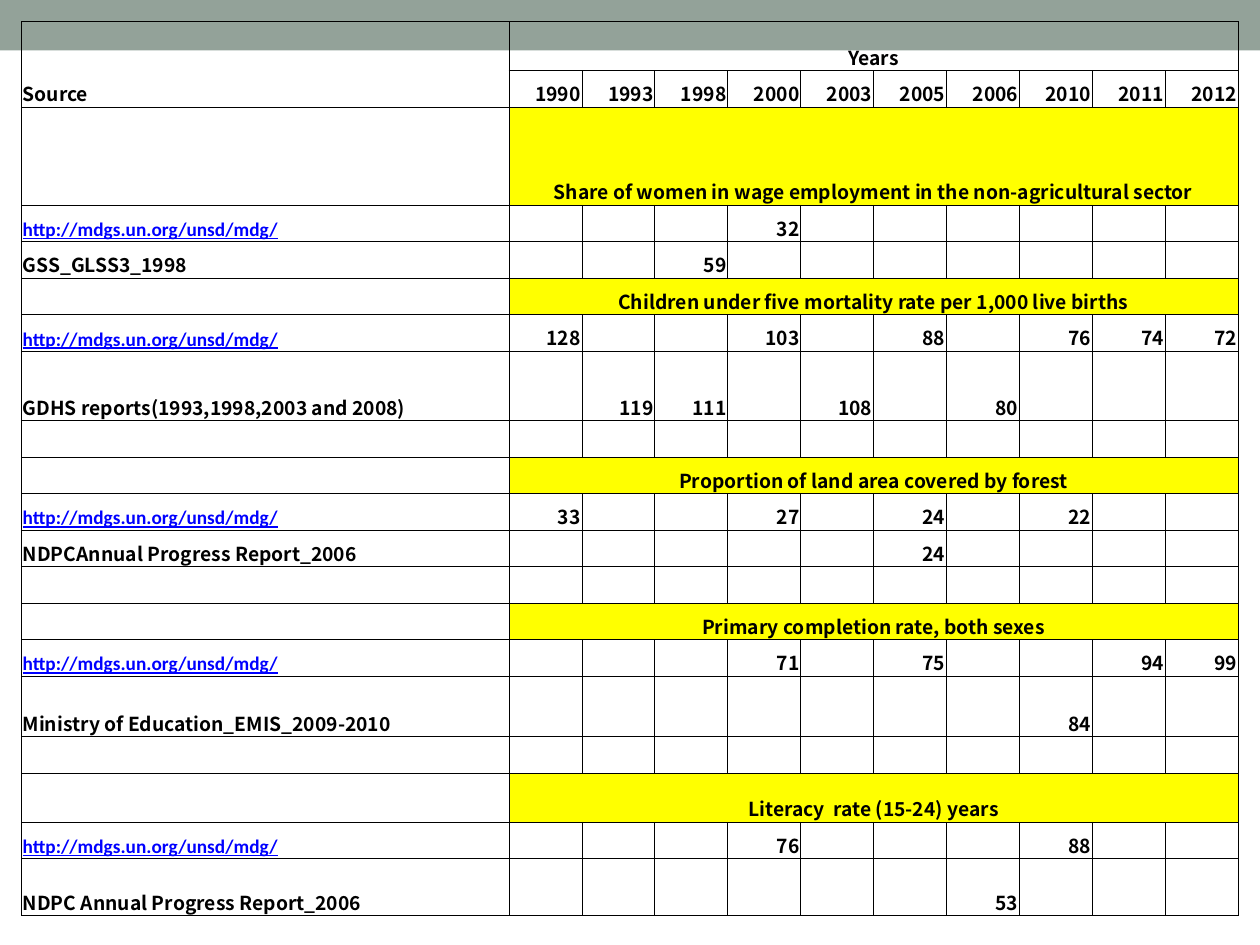
from lxml.etree import SubElement
from pptx import Presentation
from pptx.dml.color import RGBColor
from pptx.enum.shapes import MSO_SHAPE
from pptx.enum.text import MSO_ANCHOR, PP_ALIGN
from pptx.oxml.ns import qn
from pptx.util import Inches, Pt

COLORS = {"band": "93A299", "text": "000000", "link": "0000FF",
          "heading": "FFFF00", "border": "000000"}
TEXT = {"name": "Noto Sans CJK SC", "size": Pt(11), "bold": True}
LINK = {**TEXT, "name": "Calibri", "underline": True}
CELL = {"vertical_anchor": MSO_ANCHOR.BOTTOM, "margin_left": Inches(0.01),
        "margin_right": Inches(0.01), "margin_top": Inches(0.01), "margin_bottom": 0}

YEARS = [1990, 1993, 1998, 2000, 2003, 2005, 2006, 2010, 2011, 2012]
SOURCE_WIDTH, ROW_HEIGHT = 3.87, 0.29
MDG = "http://mdgs.un.org/unsd/mdg/"

# Each indicator: title, title row height, rows of (source, values by year, row height)
SPACER = ("", {}, ROW_HEIGHT)
INDICATORS = [
    ("Share of women in wage employment in the non-agricultural sector", 0.78, [
        (MDG, {2000: 32}, ROW_HEIGHT),
        ("GSS_GLSS3_1998", {1998: 59}, ROW_HEIGHT)]),
    ("Children under five mortality rate per 1,000 live births", ROW_HEIGHT, [
        (MDG, {1990: 128, 2000: 103, 2005: 88, 2010: 76, 2011: 74, 2012: 72}, ROW_HEIGHT),
        ("GDHS reports(1993,1998,2003 and 2008)",
         {1993: 119, 1998: 111, 2003: 108, 2006: 80}, 0.55),
        SPACER]),
    ("Proportion of land area covered by forest", ROW_HEIGHT, [
        (MDG, {1990: 33, 2000: 27, 2005: 24, 2010: 22}, ROW_HEIGHT),
        ("NDPCAnnual Progress Report_2006", {2005: 24}, ROW_HEIGHT),
        SPACER]),
    ("Primary completion rate, both sexes", ROW_HEIGHT, [
        (MDG, {2000: 71, 2005: 75, 2011: 94, 2012: 99}, ROW_HEIGHT),
        ("Ministry of Education_EMIS_2009-2010", {2010: 84}, 0.48),
        SPACER]),
    ("Literacy  rate (15-24) years", 0.39, [
        (MDG, {2000: 76, 2010: 88}, ROW_HEIGHT),
        ("NDPC Annual Progress Report_2006", {2006: 53}, 0.45)]),
]


def set_attrs(obj, values):
    for name, value in values.items():
        setattr(obj, name, value)


def add_band(slide, left, top, width, height):
    sp = slide.shapes.add_shape(MSO_SHAPE.RECTANGLE, left, top, width, height)
    sp.shadow.inherit = False
    sp.fill.solid()
    sp.fill.fore_color.rgb = RGBColor.from_string(COLORS["band"])
    sp.line.fill.background()


def add_borders(cell):
    tc_pr = cell._tc.get_or_add_tcPr()
    for side in ("a:lnL", "a:lnR", "a:lnT", "a:lnB"):
        ln = SubElement(tc_pr, qn(side), w=str(Pt(0.5)))
        fill = SubElement(ln, qn("a:solidFill"))
        SubElement(fill, qn("a:srgbClr"), val=COLORS["border"])


def format_blank(cell):
    """Border an unfilled cell and keep its empty line as low as a text line."""
    set_attrs(cell, CELL)
    add_borders(cell)
    cell.fill.background()
    end = cell.text_frame.paragraphs[0]._p.get_or_add_endParaRPr()
    end.set("sz", str(TEXT["size"].pt * 100).split(".")[0])


def write(cell, text, align=PP_ALIGN.LEFT):
    p = cell.text_frame.paragraphs[0]
    p.alignment = align
    r = p.add_run()
    r.text = str(text)
    is_link = text == MDG
    set_attrs(r.font, LINK if is_link else TEXT)
    r.font.color.rgb = RGBColor.from_string(COLORS["link" if is_link else "text"])


def write_heading(table, row, text):
    """Merge all year columns of a row under one centred text."""
    cell = table.cell(row, 1)
    cell.merge(table.cell(row, len(YEARS)))
    write(cell, text, PP_ALIGN.CENTER)
    return cell


def write_values(table, row, values):
    for col, year in enumerate(YEARS, 1):
        if year in values:
            write(table.cell(row, col), values[year], PP_ALIGN.RIGHT)


def write_header(table):
    table.cell(0, 0).merge(table.cell(1, 0))
    write(table.cell(0, 0), "Source")
    write_heading(table, 0, "Years")
    write_values(table, 1, {year: year for year in YEARS})


def write_indicator(table, row, title, rows):
    cell = write_heading(table, row, title)
    cell.fill.solid()
    cell.fill.fore_color.rgb = RGBColor.from_string(COLORS["heading"])
    for i, (source, values, _) in enumerate(rows, row + 1):
        if source:
            write(table.cell(i, 0), source)
        write_values(table, i, values)


def add_indicator_table(slide, left, top, width):
    heights = [0.39, ROW_HEIGHT]
    for _, height, rows in INDICATORS:
        heights += [height] + [row[2] for row in rows]
    table = slide.shapes.add_table(len(heights), len(YEARS) + 1, left, top,
                                   width, Inches(sum(heights))).table
    set_attrs(table, {"first_row": False, "horz_banding": False})
    for row, height in zip(table.rows, heights):
        row.height = Inches(height)
    source_width = Inches(SOURCE_WIDTH)
    for i, column in enumerate(table.columns):
        column.width = (width - source_width) // len(YEARS) if i else source_width
    for cell in table.iter_cells():
        format_blank(cell)

    write_header(table)
    row = 2
    for title, _, rows in INDICATORS:
        write_indicator(table, row, title, rows)
        row += len(rows) + 1


def main():
    prs = Presentation()
    prs.slide_width, prs.slide_height = Inches(10), Inches(7.5)
    slide = prs.slides.add_slide(prs.slide_layouts[6])
    add_band(slide, 0, 0, prs.slide_width, Inches(0.4))
    add_indicator_table(slide, Inches(0.17), Inches(0.17), Inches(9.66))
    prs.save("out.pptx")


if __name__ == "__main__":
    main()
